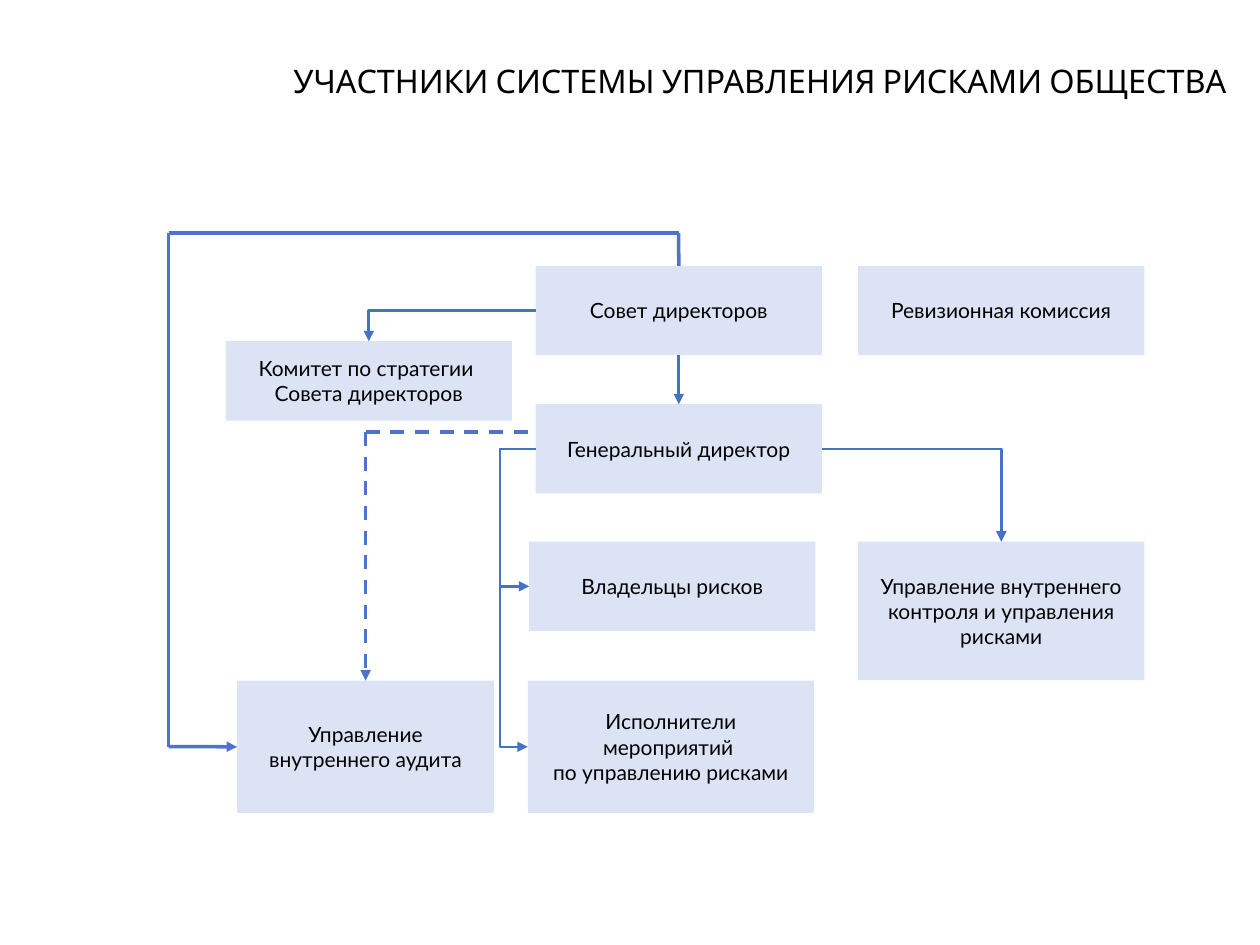
from lxml import etree
from pptx import Presentation, util as u
from pptx.dml.color import RGBColor
from pptx.enum import dml, shapes, text
from pptx.oxml.ns import qn

Cm = u.Cm
BOX_FILL, BLACK = "DCE3F5", "000000"
THIN = dict(color="4472C4", width=1.5)
THICK = dict(color="4F72CD", width=2)
TOP, LEFT, BOTTOM, RIGHT = range(4)  # connection sites of a rectangle
BOX_W, BOX_H = 5.77, 1.8
BRANCH_X = 10.08  # shared trunk from the director to risk owners and executors

# key: left, top, width, height, text
BOXES = {
    "board": (10.8, 5.36, BOX_W, BOX_H, "Совет директоров"),
    "committee": (4.55, 6.88, BOX_W, 1.6, "Комитет по стратегии \nСовета директоров"),
    "director": (10.8, 8.15, BOX_W, BOX_H, "Генеральный директор"),
    "owners": (10.67, 10.92, BOX_W, BOX_H, "Владельцы рисков"),
    "control": (17.3, 10.92, BOX_W, 2.79,
                "Управление внутреннего контроля и управления рисками"),
    "executors": (10.64, 13.72, BOX_W, 2.67,
                  "Исполнители мероприятий \nпо управлению рисками"),
    "audit": (4.78, 13.72, 5.18, 2.67, "Управление внутреннего аудита"),
    "revision": (17.3, 5.36, BOX_W, BOX_H, "Ревизионная комиссия"),
}


def rgb(value):
    return RGBColor.from_string(value)


def write(tf, content, size=12, font="Lato", color=BLACK):
    tf.word_wrap = True
    tf.vertical_anchor = text.MSO_ANCHOR.MIDDLE
    for i, line in enumerate(content.split("\n")):
        p = tf.paragraphs[0] if i == 0 else tf.add_paragraph()
        p.alignment = text.PP_ALIGN.CENTER
        r = p.add_run()
        r.text = line
        r.font.size = u.Pt(size)
        r.font.name = font
        r.font.color.rgb = rgb(color)


def add_title(s, content):
    sp = s.shapes.title
    sp.left, sp.top, sp.width, sp.height = Cm(5.23), Cm(0.94), Cm(20.17), Cm(1.37)
    write(sp.text_frame, content, size=18.5, font="Cabin")


def add_box(s, left, top, width, height, content):
    sp = s.shapes.add_shape(shapes.MSO_SHAPE.RECTANGLE,
                            Cm(left), Cm(top), Cm(width), Cm(height))
    sp.shadow.inherit = False
    sp.fill.solid()
    sp.fill.fore_color.rgb = rgb(BOX_FILL)
    sp.line.fill.background()
    write(sp.text_frame, content)
    return sp


def add_line(s, start=(0, 0), end=(0, 0), begin_at=None, end_at=None,
             kind=shapes.MSO_CONNECTOR.STRAIGHT, color=BLACK, width=1,
             dash=False, arrow=False):
    """Line between points in cm; begin_at and end_at are (box, site)."""
    cx = s.shapes.add_connector(kind, *(Cm(v) for v in (*start, *end)))
    if begin_at:
        cx.begin_connect(*begin_at)
    if end_at:
        cx.end_connect(*end_at)
    cx.line.color.rgb = rgb(color)
    cx.line.width = u.Pt(width)
    if dash:
        cx.line.dash_style = dml.MSO_LINE.DASH
    if arrow:
        etree.SubElement(cx.line._get_or_add_ln(), qn("a:tailEnd"), type="triangle")
    etree.SubElement(cx._element.spPr, qn("a:effectLst"))
    return cx


def add_elbow(s, begin_at, end_at, via_x=None):
    """Bent arrow: one corner, or two corners on the vertical at via_x."""
    cx = add_line(s, begin_at=begin_at, end_at=end_at, arrow=True,
                  kind=shapes.MSO_CONNECTOR.ELBOW, **THIN)
    geom = cx._element.spPr.find(qn("a:prstGeom"))
    if via_x is None:
        geom.set("prst", "bentConnector2")
        return
    guides = geom.find(qn("a:avLst"))
    if guides is None:
        guides = etree.SubElement(geom, qn("a:avLst"))
    ratio = (Cm(via_x) - cx.begin_x) / (cx.end_x - cx.begin_x)
    etree.SubElement(guides, qn("a:gd"), name="adj1", fmla=f"val {round(ratio * 100000)}")


def main():
    prs = Presentation()
    prs.slide_width, prs.slide_height = Cm(25.4), Cm(19.05)
    s = prs.slides.add_slide(prs.slide_layouts[5])
    add_title(s, "УЧАСТНИКИ СИСТЕМЫ УПРАВЛЕНИЯ РИСКАМИ ОБЩЕСТВА")
    box = {key: add_box(s, *args) for key, args in BOXES.items()}

    # Reporting lines between the bodies
    add_line(s, begin_at=(box["board"], BOTTOM), end_at=(box["director"], TOP),
             arrow=True, **THIN)
    add_elbow(s, (box["board"], LEFT), (box["committee"], TOP))
    add_elbow(s, (box["director"], RIGHT), (box["control"], TOP))
    for key in ("owners", "executors"):
        add_elbow(s, (box["director"], LEFT), (box[key], LEFT), via_x=BRANCH_X)

    # Dashed line from the director to internal audit
    corner = (7.37, 8.71)
    add_line(s, corner, (10.72, 8.71), dash=True, **THICK)
    add_line(s, corner, end_at=(box["audit"], TOP), dash=True, arrow=True, **THICK)

    # Thick loop from the board around the left side to internal audit
    loop_right, loop_left, loop_top, loop_bottom = 13.68, 3.4, 4.7, 15.05
    add_line(s, (loop_right, loop_top), end_at=(box["board"], TOP), **THICK)
    add_line(s, (loop_left, loop_top), (loop_right, loop_top), **THICK)
    add_line(s, (loop_left, loop_bottom), (loop_left, loop_top), **THICK)
    add_line(s, (loop_left, loop_bottom), end_at=(box["audit"], LEFT),
             arrow=True, **THICK)

    prs.save("out.pptx")


if __name__ == "__main__":
    main()
